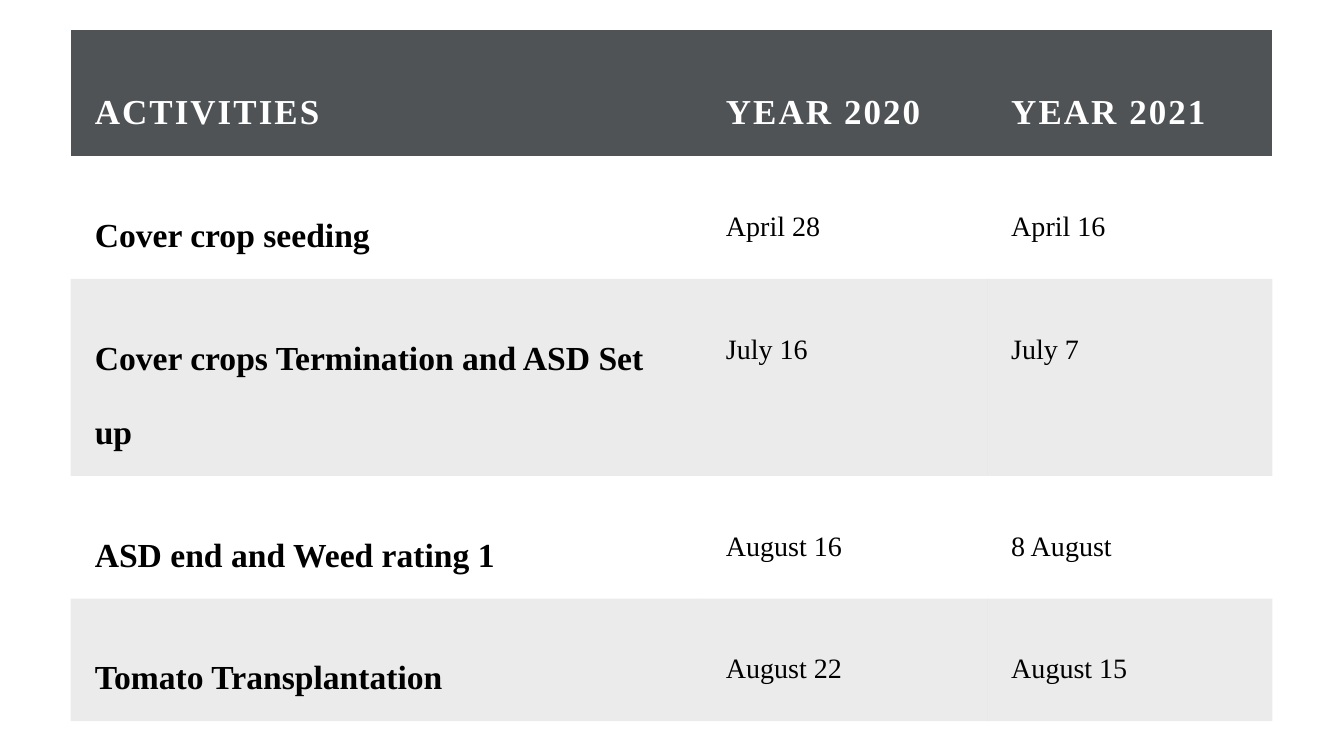
"""Build a slide with a table of field activities and their dates in two years."""
from lxml import etree
from pptx import Presentation, util as u
from pptx.dml.color import RGBColor
from pptx.oxml import ns

NO_STYLE = "{2D5ABB26-0587-4C30-8999-92F81FD0307C}"
SCHEDULE = [
    ("ACTIVITIES", "YEAR 2020", "YEAR 2021"),
    ("Cover crop seeding", "April 28", "April 16"),
    ("Cover crops Termination and ASD Set up", "July 16", "July 7"),
    ("ASD end and Weed rating 1", "August 16", "8 August"),
    ("Tomato Transplantation", "August 22", "August 15"),
]
COLUMN_WIDTHS = [6.26, 2.83, 2.83]
HEADER_HEIGHT, ROW_HEIGHT = 1.25, 1.11
INSET = u.Inches(0.24)


def colour(code):
    return RGBColor.from_string(code)


deck = Presentation()
deck.slide_width, deck.slide_height = u.Inches(13.33), u.Inches(7.5)
page = deck.slides.add_slide(deck.slide_layouts[6])

row_heights = [HEADER_HEIGHT] + [ROW_HEIGHT] * (len(SCHEDULE) - 1)
frame = page.shapes.add_table(
    len(SCHEDULE), len(COLUMN_WIDTHS), u.Inches(0.7), u.Inches(0.3),
    u.Inches(sum(COLUMN_WIDTHS)), u.Inches(sum(row_heights)))
table = frame.table
table.horz_banding = False
table._tbl.tblPr.find(ns.qn("a:tableStyleId")).text = NO_STYLE

for column, width in zip(table.columns, COLUMN_WIDTHS):
    column.width = u.Inches(width)

for r, (row, height, entries) in enumerate(zip(table.rows, row_heights, SCHEDULE)):
    row.height = u.Inches(height)
    header = r == 0
    for c, (cell, entry) in enumerate(zip(row.cells, entries)):
        cell.margin_left = cell.margin_right = INSET
        cell.margin_top = cell.margin_bottom = INSET
        cell.text = entry
        para = cell.text_frame.paragraphs[0]
        para.line_spacing = 2.0
        font = para.font
        font.name = "Times New Roman"
        font.size = u.Pt(25 if header else 24 if c == 0 else 20)
        font.bold = header or c == 0
        font.color.rgb = colour("FFFFFF" if header else "000000")
        if header:
            font._element.set("spc", "150")
        if r % 2:
            cell.fill.background()
            continue
        cell.fill.solid()
        cell.fill.fore_color.rgb = colour("505356" if header else "000000")
        if not header:
            shade = cell._tc.tcPr.find(".//" + ns.qn("a:srgbClr"))
            etree.SubElement(shade, ns.qn("a:alpha")).set("val", "8000")

deck.save("out.pptx")
